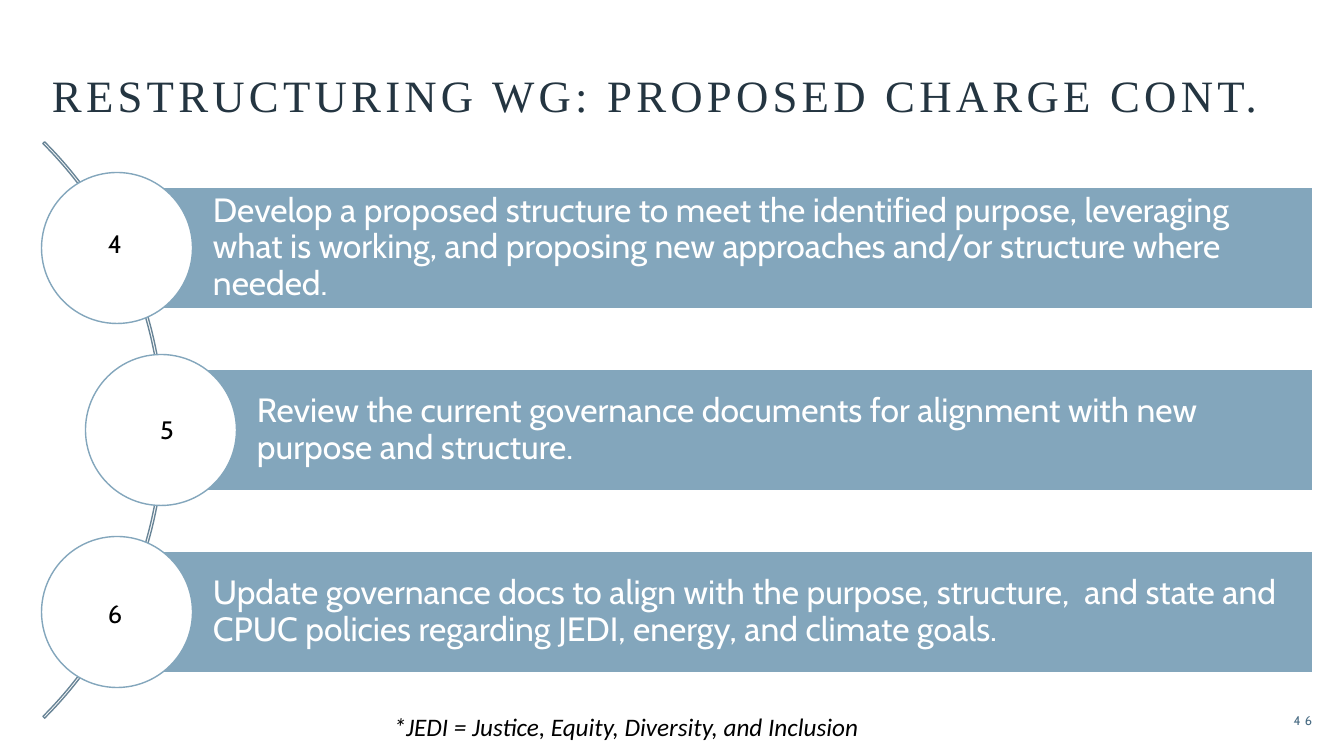
from dataclasses import dataclass

from pptx import Presentation
from pptx.dml.color import RGBColor
from pptx.enum.shapes import MSO_SHAPE
from pptx.enum.text import MSO_ANCHOR, MSO_AUTO_SIZE, PP_ALIGN
from pptx.util import Emu, Pt

TITLE = "RESTRUCTURING WG: PROPOSED CHARGE CONT."
CHARGES = [
    ("4", "Develop a proposed structure to meet the identified purpose, leveraging what is working, and proposing new approaches and/or structure where needed.", 117, (115, 243)),
    ("5", "Review the current governance documents for alignment with new purpose and structure.", 161, (167, 429)),
    ("6", "Update governance docs to align with the purpose, structure,  and state and CPUC policies regarding JEDI, energy, and climate goals.", 117, (115, 613)),
]
FOOTNOTE = "*JEDI = Justice, Equity, Diversity, and Inclusion"
PAGE_NUMBER = "46"

SLIDE_SIZE = (1344, 756)
MIDDLE_Y = 430
ROW_PITCH = 182
BAR_RIGHT = 1313
BAR_HEIGHT = 121
CIRCLE_SIZE = 151
ARC_LEFT = -651
ARC_SIZE = 815
NUMBER_SIZE = (52, 40)


@dataclass(frozen=True)
class Theme:
    title_font: str = "Times New Roman"
    body_font: str = "Cabin"
    note_font: str = "Calibri"
    title_size: int = 32
    body_size: int = 24
    label_size: int = 18
    page_size: int = 9
    navy: str = "243541"
    steel: str = "83A6BC"
    arc: str = "698597"
    page: str = "486B83"
    white: str = "FFFFFF"
    black: str = "000000"


THEME = Theme()


def px(length):
    return Emu(round(length * 914400 / 100.8))


def write(shape, text, *, size, color, font=THEME.body_font, align=PP_ALIGN.LEFT,
          anchor=MSO_ANCHOR.TOP, italic=False, tracking=0, line_spacing=1.0, insets=(10, 5, 10, 5)):
    frame = shape.text_frame
    frame.word_wrap = True
    frame.auto_size = MSO_AUTO_SIZE.NONE
    frame.vertical_anchor = anchor
    frame.margin_left, frame.margin_top, frame.margin_right, frame.margin_bottom = map(px, insets)
    paragraph = frame.paragraphs[0]
    paragraph.alignment = align
    paragraph.line_spacing = line_spacing
    run = paragraph.add_run()
    run.text = text
    run.font.name = font
    run.font.size = Pt(size)
    run.font.italic = italic
    run.font.bold = False
    run.font.color.rgb = RGBColor.from_string(color)
    if tracking:
        run.font._element.set("spc", str(tracking * 100))


def add_figure(slide, kind, box, line, fill=None):
    shape = slide.shapes.add_shape(kind, *map(px, box))
    shape.shadow.inherit = False
    if fill:
        shape.fill.solid()
        shape.fill.fore_color.rgb = RGBColor.from_string(fill)
    else:
        shape.fill.background()
    shape.line.color.rgb = RGBColor.from_string(line)
    shape.line.width = Pt(1)
    return shape


def add_label(slide, box, text, **style):
    write(slide.shapes.add_textbox(*map(px, box)), text, **style)


def add_charge(slide, center_y, number, text, center_x, number_center):
    bar = add_figure(
        slide, MSO_SHAPE.RECTANGLE,
        (center_x, center_y - BAR_HEIGHT / 2, BAR_RIGHT - center_x, BAR_HEIGHT),
        THEME.white, THEME.steel)
    write(bar, text, size=THEME.body_size, color=THEME.white, anchor=MSO_ANCHOR.MIDDLE,
          line_spacing=0.9, insets=(96, 7, 7, 7))
    radius = CIRCLE_SIZE / 2
    add_figure(slide, MSO_SHAPE.OVAL,
               (center_x - radius, center_y - radius, CIRCLE_SIZE, CIRCLE_SIZE),
               THEME.steel, THEME.white)
    width, height = NUMBER_SIZE
    number_x, number_y = number_center
    add_label(slide, (number_x - width / 2, number_y - height / 2, width, height), number,
              size=THEME.label_size, color=THEME.black, align=PP_ALIGN.CENTER)


def main():
    presentation = Presentation()
    presentation.slide_width, presentation.slide_height = map(px, SLIDE_SIZE)
    slide = presentation.slides.add_slide(presentation.slide_layouts[5])

    title = slide.shapes.title
    title.left, title.top, title.width, title.height = map(px, (42, 23, 1257, 104))
    write(title, TITLE, size=THEME.title_size, color=THEME.navy, font=THEME.title_font,
          anchor=MSO_ANCHOR.BOTTOM, tracking=3, line_spacing=0.9)

    arc = add_figure(slide, MSO_SHAPE.BLOCK_ARC,
                     (ARC_LEFT, MIDDLE_Y - ARC_SIZE / 2, ARC_SIZE, ARC_SIZE), THEME.arc)
    for index, value in enumerate((189, 27, 0.003)):
        arc.adjustments[index] = value

    for row, charge in enumerate(CHARGES):
        add_charge(slide, MIDDLE_Y + (row - 1) * ROW_PITCH, *charge)

    add_label(slide, (1226, 701, 96, 40), PAGE_NUMBER, size=THEME.page_size, color=THEME.page,
              align=PP_ALIGN.RIGHT, anchor=MSO_ANCHOR.MIDDLE, tracking=3)
    add_label(slide, (38, 706, 1176, 40), FOOTNOTE, size=THEME.label_size, color=THEME.black,
              font=THEME.note_font, align=PP_ALIGN.CENTER, italic=True)
    presentation.save("out.pptx")


if __name__ == "__main__":
    main()
